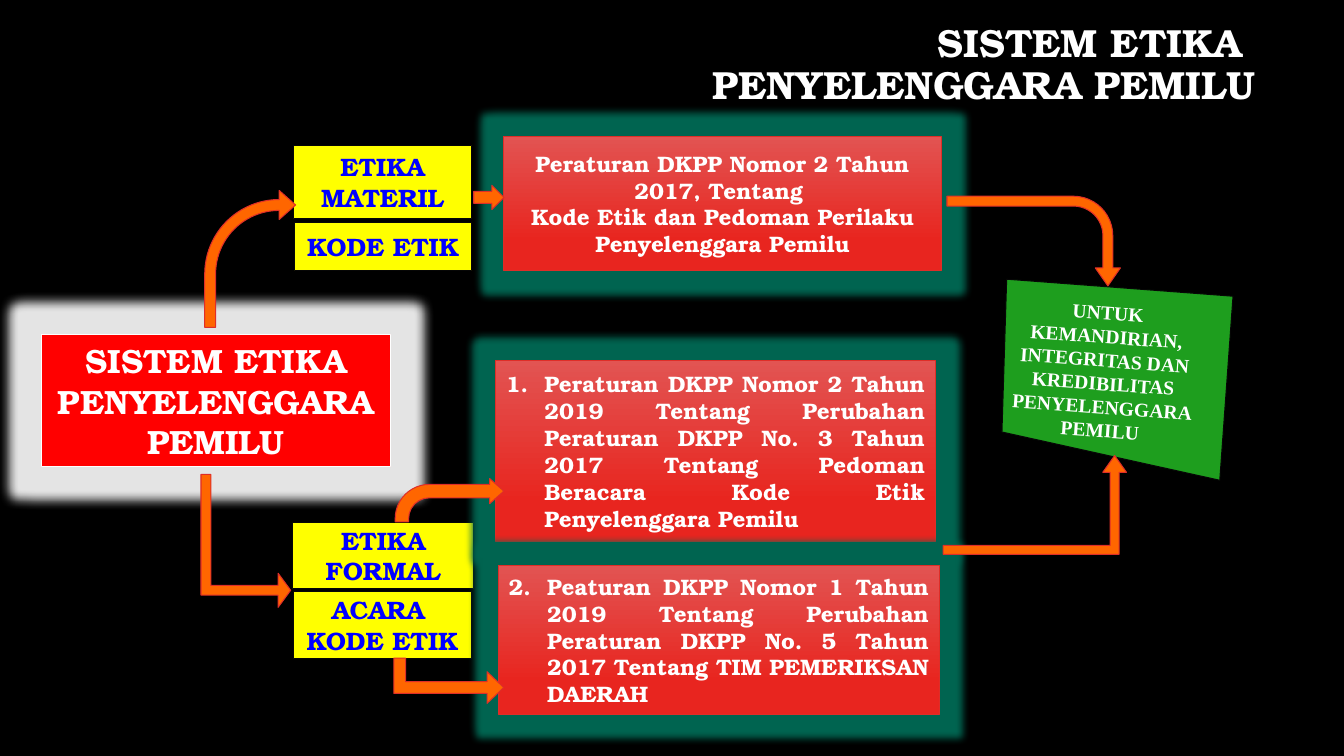
from dataclasses import dataclass

from lxml.etree import SubElement
from pptx import Presentation
from pptx.dml.color import RGBColor
from pptx.enum.shapes import MSO_SHAPE
from pptx.enum.text import MSO_ANCHOR, PP_ALIGN
from pptx.oxml.ns import qn
from pptx.shapes.autoshape import Shape
from pptx.slide import Slide
from pptx.text.text import TextFrame, _Paragraph, _Run
from pptx.util import Cm, Pt

BLACK = RGBColor(0x00, 0x00, 0x00)
WHITE = RGBColor(0xFF, 0xFF, 0xFF)
INK = RGBColor(0x06, 0x06, 0x06)
RED = RGBColor(0xFF, 0x00, 0x00)
ROSE = RGBColor(0xE2, 0x54, 0x52)
BRICK = RGBColor(0xE8, 0x25, 0x1F)
RIM = RGBColor(0xDF, 0x2E, 0x28)
YELLOW = RGBColor(0xFF, 0xFF, 0x00)
BLUE = RGBColor(0x00, 0x00, 0xFF)
ORANGE = RGBColor(0xFF, 0x66, 0x00)
GREEN = RGBColor(0x1E, 0x9E, 0x1E)
TEAL = RGBColor(0x00, 0x64, 0x50)
SILVER = RGBColor(0xE4, 0xE4, 0xE4)
SERIF = "TeX Gyre Bonum"
ROMAN = "Times New Roman"


@dataclass
class Box:
    left: float
    top: float
    width: float
    height: float


@dataclass
class Label:
    box: Box
    lines: list[str]


@dataclass
class Rule:
    box: Box
    lines: list[str]
    number: int = 0


@dataclass
class Arrow:
    kind: MSO_SHAPE
    box: Box
    bends: tuple[float, ...] = ()
    turn: int = 0


LABELS = [
    Label(Box(7.39, 3.66, 4.5, 1.85), ["ETIKA MATERIL"]),
    Label(Box(7.42, 5.61, 4.47, 1.22), ["KODE ETIK"]),
    Label(Box(7.37, 13.16, 4.57, 1.68), ["ETIKA FORMAL"]),
    Label(Box(7.39, 14.91, 4.5, 1.68), ["ACARA ", "KODE ETIK"]),
]

RULES = [
    Rule(Box(12.7, 3.43, 11.02, 3.4),
         ["Peraturan DKPP Nomor 2 Tahun 2017, Tentang ",
          "Kode Etik dan Pedoman Perilaku Penyelenggara Pemilu"]),
    Rule(Box(12.5, 9.09, 11.07, 4.55),
         ["Peraturan DKPP Nomor 2 Tahun 2019 Tentang Perubahan Peraturan "
          "DKPP No. 3 Tahun 2017 Tentang Pedoman Beracara Kode Etik "
          "Penyelenggara Pemilu"], 1),
    Rule(Box(12.57, 14.25, 11.1, 3.76),
         ["Peaturan DKPP Nomor 1 Tahun 2019 Tentang Perubahan Peraturan "
          "DKPP No. 5 Tahun 2017 Tentang TIM PEMERIKSAN DAERAH"], 2),
]

BENT, UP = MSO_SHAPE.BENT_ARROW, MSO_SHAPE.BENT_UP_ARROW
ARROWS = [
    Arrow(BENT, Box(5.16, 4.8, 2.29, 3.45), (0.12, 0.16, 0.18, 0.82)),
    Arrow(UP, Box(4.52, 12.5, 3.35, 2.26), (0.11, 0.19, 0.14), 90),
    Arrow(MSO_SHAPE.RIGHT_ARROW, Box(11.94, 4.67, 0.76, 0.61)),
    Arrow(BENT, Box(9.96, 12.06, 2.74, 1.09), (0.31, 0.29, 0.33, 0.79)),
    Arrow(UP, Box(10.74, 15.77, 1.14, 2.77), (0.26, 0.35, 0.37), 90),
    Arrow(UP, Box(23.77, 11.48, 4.62, 2.49), (0.09, 0.12, 0.17)),
    Arrow(BENT, Box(24.92, 3.89, 2.26, 4.37), (0.11, 0.14, 0.2, 0.44), 90),
]

GOAL = ["UNTUK",
        "KEMANDIRIAN, INTEGRITAS DAN KREDIBILITAS PENYELENGGARA PEMILU"]
CORNERS = [(25.2, 7.23), (30.92, 7.26), (30.91, 11.91), (25.35, 11.08)]


def style(run: _Run, size: int, color: RGBColor, name: str = SERIF) -> None:
    font = run.font
    font.size, font.name, font.bold = Pt(size), name, True
    font.color.rgb = color


def write(frame: TextFrame, lines: list[str], size: int, color: RGBColor,
          name: str = SERIF) -> list[_Paragraph]:
    frame.word_wrap = True
    frame.vertical_anchor = MSO_ANCHOR.MIDDLE
    for i, line in enumerate(lines):
        para = frame.add_paragraph() if i else frame.paragraphs[0]
        para.alignment = PP_ALIGN.CENTER
        run = para.add_run()
        run.text = line
        style(run, size, color, name)
    return list(frame.paragraphs)


def paint(shape: Shape, fill: RGBColor, line: RGBColor) -> None:
    shape.shadow.inherit = False
    shape.fill.solid()
    shape.fill.fore_color.rgb = fill
    shape.line.color.rgb = line
    shape.line.width = Pt(0.75)


def place(slide: Slide, kind: MSO_SHAPE, box: Box, fill: RGBColor,
          line: RGBColor) -> Shape:
    shape = slide.shapes.add_shape(
        kind, Cm(box.left), Cm(box.top), Cm(box.width), Cm(box.height))
    paint(shape, fill, line)
    return shape


def glow(shape: Shape, color: RGBColor, size: int) -> None:
    effects = shape.element.spPr.find(qn("a:effectLst"))
    halo = SubElement(effects, qn("a:glow"), rad=str(Pt(size)))
    SubElement(halo, qn("a:srgbClr"), val=str(color))


def count(para: _Paragraph, number: int) -> None:
    """Number a paragraph with a hanging indent."""
    para.alignment = PP_ALIGN.JUSTIFY
    props = para._p.get_or_add_pPr()
    props.set("marL", str(Cm(0.97)))
    props.set("indent", str(Cm(-0.97)))
    SubElement(props, qn("a:buAutoNum"), type="arabicPeriod",
               startAt=str(number))


def draw_title(slide: Slide) -> None:
    title = slide.shapes.title
    title.left, title.top = Cm(16.54), Cm(0.48)
    title.width, title.height = Cm(15.34), Cm(2.34)
    frame = title.text_frame
    frame.word_wrap = True
    frame.vertical_anchor = MSO_ANCHOR.MIDDLE
    para = frame.paragraphs[0]
    para.alignment, para.line_spacing = PP_ALIGN.RIGHT, 0.9
    for i, line in enumerate(["SISTEM ETIKA ", "PENYELENGGARA PEMILU"]):
        if i:
            para.add_line_break()
        run = para.add_run()
        run.text = line
        style(run, 28, WHITE)


def draw_rule(slide: Slide, rule: Rule) -> None:
    shape = place(slide, MSO_SHAPE.RECTANGLE, rule.box, BRICK, RIM)
    shape.fill.gradient()
    shape.fill.gradient_angle = 270
    stops = zip(shape.fill.gradient_stops, (0, 0.78), (ROSE, BRICK))
    for stop, spot, color in stops:
        stop.position, stop.color.rgb = spot, color
    glow(shape, TEAL, 11)
    paras = write(shape.text_frame, rule.lines, 16, WHITE)
    if rule.number:
        count(paras[0], rule.number)


def draw_goal(slide: Slide) -> None:
    first, *rest = [(Cm(x), Cm(y)) for x, y in CORNERS]
    pen = slide.shapes.build_freeform(*first)
    pen.add_line_segments(rest)
    shape = pen.convert_to_shape()
    paint(shape, GREEN, INK)
    shape.rotation = 4
    frame = shape.text_frame
    write(frame, GOAL, 14, WHITE, ROMAN)
    frame.margin_left, frame.margin_right = Cm(0.2), Cm(0.7)
    frame.margin_top, frame.margin_bottom = Cm(0.1), Cm(0.5)


def main() -> None:
    deck = Presentation()
    deck.slide_width, deck.slide_height = Cm(33.87), Cm(19.05)
    slide = deck.slides.add_slide(deck.slide_layouts[5])
    slide.background.fill.solid()
    slide.background.fill.fore_color.rgb = BLACK
    draw_title(slide)

    root = place(slide, MSO_SHAPE.RECTANGLE, Box(1.04, 8.43, 8.81, 3.33),
                 RED, WHITE)
    glow(root, SILVER, 15)
    write(root.text_frame, ["SISTEM ETIKA PENYELENGGARA PEMILU"], 24, WHITE)
    for label in LABELS:
        shape = place(slide, MSO_SHAPE.RECTANGLE, label.box, YELLOW, INK)
        write(shape.text_frame, label.lines, 18, BLUE)
    for rule in RULES:
        draw_rule(slide, rule)
    draw_goal(slide)
    for arrow in ARROWS:
        shape = place(slide, arrow.kind, arrow.box, ORANGE, RIM)
        shape.rotation = arrow.turn
        for i, bend in enumerate(arrow.bends):
            shape.adjustments[i] = bend
    deck.save("out.pptx")


if __name__ == "__main__":
    main()
